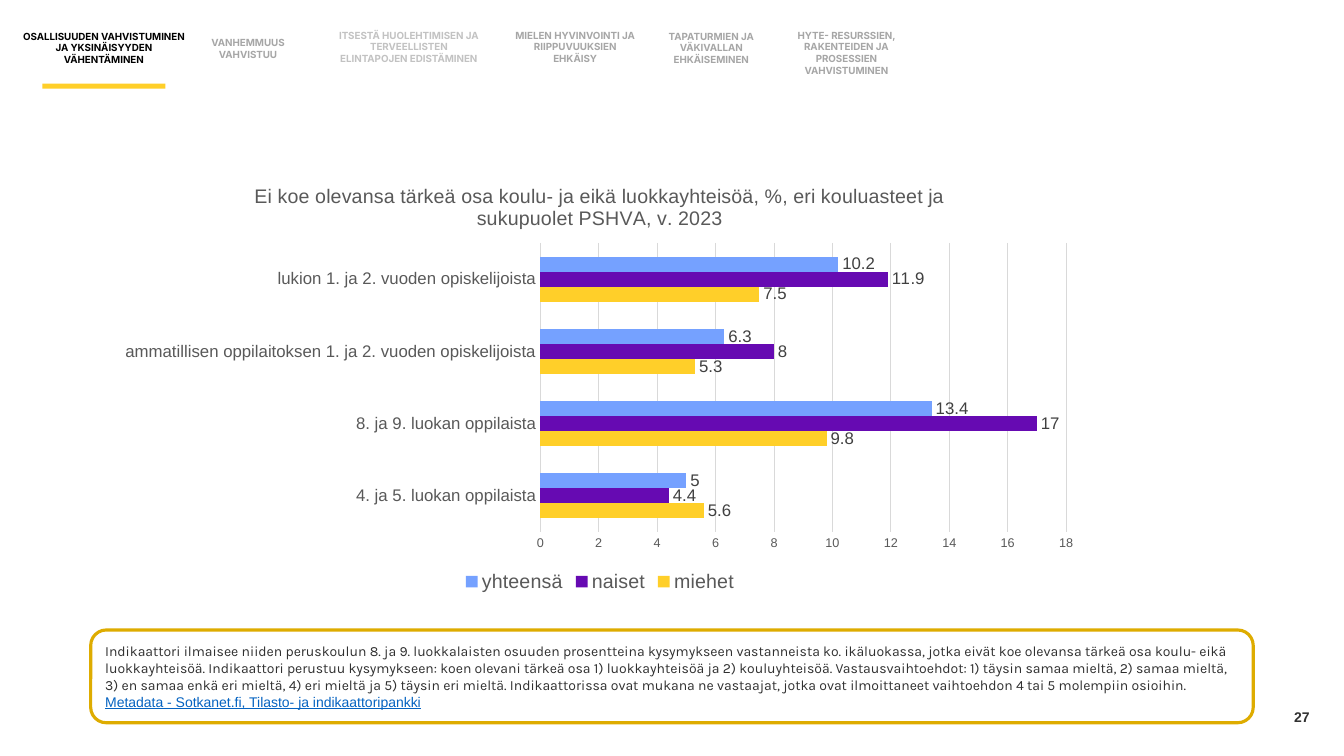
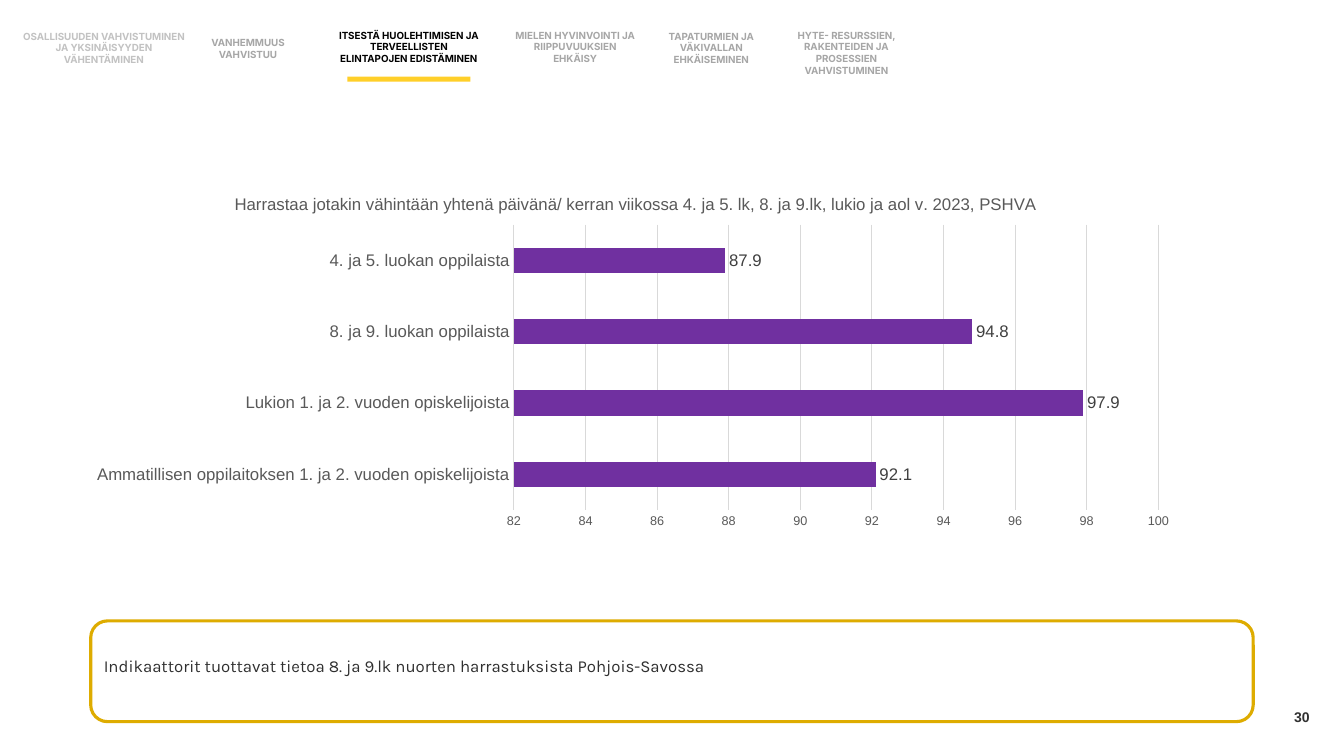
from pptx import Presentation
from pptx.chart.data import CategoryChartData
from pptx.dml.color import RGBColor
from pptx.enum.chart import XL_CHART_TYPE, XL_LABEL_POSITION, XL_LEGEND_POSITION, XL_TICK_MARK
from pptx.enum.shapes import MSO_SHAPE
from pptx.enum.text import MSO_ANCHOR, PP_ALIGN
from pptx.oxml import parse_xml
from pptx.oxml.ns import nsdecls
from pptx.util import Inches, Pt

# Shared look
BLACK, INK, NUMBER_INK = "000000", "303030", "313131"
GREY, PALE_GREY = "A6A6A6", "C2C2C2"
AXIS_TEXT, LABEL_TEXT, GRID = "595959", "404040", "D9D9D9"
YELLOW, FRAME, LINK = "FFCF29", "DEAC00", "0563C1"
PURPLE, BLUE, VIOLET = "660AB2", "75A1FF", "7030A0"

# Navigation tabs: text, (left, top, width, height), colour when not active
TABS = [
    ("OSALLISUUDEN VAHVISTUMINEN JA YKSINÄISYYDEN VÄHENTÄMINEN", (0.22, 0.24, 1.62, 0.47), PALE_GREY),
    ("VANHEMMUUS VAHVISTUU", (1.85, 0.36, 1.22, 0.24), GREY),
    ("ITSESTÄ HUOLEHTIMISEN JA TERVEELLISTEN ELINTAPOJEN EDISTÄMINEN", (3.35, 0.29, 1.41, 0.35), PALE_GREY),
    ("MIELEN HYVINVOINTI JA RIIPPUVUUKSIEN EHKÄISY", (5.07, 0.29, 1.27, 0.35), GREY),
    ("TAPATURMIEN JA VÄKIVALLAN EHKÄISEMINEN", (6.42, 0.3, 1.27, 0.35), GREY),
    ("HYTE- RESURSSIEN, RAKENTEIDEN JA PROSESSIEN\nVAHVISTUMINEN", (7.69, 0.29, 1.41, 0.47), GREY),
]
MARKER_WIDTH, MARKER_HEIGHT, MARKER_GAP = 1.22, 0.05, 0.12

BELONGING_NOTE = (
    "Indikaattori ilmaisee niiden peruskoulun 8. ja 9. luokkalaisten osuuden prosentteina kysymykseen "
    "vastanneista ko. ikäluokassa, jotka eivät koe olevansa tärkeä osa koulu- eikä luokkayhteisöä. "
    "Indikaattori perustuu kysymykseen: koen olevani tärkeä osa 1) luokkayhteisöä ja 2) kouluyhteisöä. "
    "Vastausvaihtoehdot: 1) täysin samaa mieltä, 2) samaa mieltä, 3) en samaa enkä eri mieltä, "
    "4) eri mieltä ja 5) täysin eri mieltä. Indikaattorissa ovat mukana ne vastaajat, jotka ovat "
    "ilmoittaneet vaihtoehdon 4 tai 5 molempiin osioihin. "
)


def rgb(color):
    return RGBColor.from_string(color)


def place(box):
    return [Inches(value) for value in box]


def style_font(font, size, color, name="Arial", bold=False):
    font.size, font.name, font.bold = Pt(size), name, bold
    font.color.rgb = rgb(color)


def add_text(page, box, text, size, color, name, bold=False,
             align=PP_ALIGN.LEFT, anchor=MSO_ANCHOR.MIDDLE):
    frame = page.shapes.add_textbox(*place(box)).text_frame
    frame.word_wrap = True
    frame.vertical_anchor = anchor
    frame.margin_left = frame.margin_right = frame.margin_top = frame.margin_bottom = 0
    frame.text = text
    for para in frame.paragraphs:
        para.alignment = align
        style_font(para.font, size, color, name, bold)


def add_tabs(page, active):
    for index, (text, box, resting) in enumerate(TABS):
        color = BLACK if index == active else resting
        add_text(page, box, text, 7, color, "Inter", True, PP_ALIGN.CENTER)
    left, top, width, height = TABS[active][1]
    marker = page.shapes.add_shape(MSO_SHAPE.RECTANGLE, *place((
        left + (width - MARKER_WIDTH) / 2, top + height + MARKER_GAP, MARKER_WIDTH, MARKER_HEIGHT)))
    marker.shadow.inherit = False
    marker.fill.solid()
    marker.fill.fore_color.rgb = rgb(YELLOW)
    marker.line.fill.background()


def add_page(deck, number, active):
    page = deck.slides.add_slide(deck.slide_layouts[6])
    add_text(page, (9.99, 6.91, 3, 0.4), number, 10, NUMBER_INK, "Arial", True, PP_ALIGN.RIGHT)
    add_tabs(page, active)
    return page


def add_note_frame(page, top, height):
    note = page.shapes.add_shape(MSO_SHAPE.ROUNDED_RECTANGLE, *place((0.9, top, 11.53, height)))
    note.shadow.inherit = False
    note.fill.background()
    note.line.color.rgb = rgb(FRAME)
    note.line.width = Pt(2.25)
    return note.text_frame


def fix_plot_area(chart, plot_box):
    """Pin the inner plot area, given as fractions of the chart."""
    values = "".join(f'<c:{tag} val="{value}"/>' for tag, value in zip("xywh", plot_box))
    layout = parse_xml(
        f'<c:layout {nsdecls("c")}><c:manualLayout><c:layoutTarget val="inner"/>'
        f'<c:xMode val="edge"/><c:yMode val="edge"/>{values}</c:manualLayout></c:layout>')
    plot_area = chart.plots[0]._element.getparent()
    for old in plot_area.findall(layout.tag):
        plot_area.remove(old)
    plot_area.insert(0, layout)


def add_bar_chart(page, box, plot_box, title, title_size, categories, series, scale, legend=False):
    data = CategoryChartData()
    data.categories = categories
    for name, values, _ in series:
        data.add_series(name, values)
    chart = page.shapes.add_chart(XL_CHART_TYPE.BAR_CLUSTERED, *place(box), data).chart
    style_font(chart.font, 10, BLACK)

    # Title and legend
    chart.has_title = True
    chart.chart_title.text_frame.text = title
    chart.chart_title.include_in_layout = False
    style_font(chart.chart_title.text_frame.paragraphs[0].font, title_size, AXIS_TEXT)
    chart.has_legend = legend
    if legend:
        chart.legend.position = XL_LEGEND_POSITION.BOTTOM
        chart.legend.include_in_layout = False
        style_font(chart.legend.font, 14, AXIS_TEXT)

    # Axes
    for axis, size in ((chart.category_axis, 12), (chart.value_axis, 9)):
        axis.major_tick_mark = axis.minor_tick_mark = XL_TICK_MARK.NONE
        style_font(axis.tick_labels.font, size, AXIS_TEXT)
    value_axis = chart.value_axis
    value_axis.minimum_scale, value_axis.maximum_scale = scale
    value_axis.major_unit = 2
    value_axis.has_major_gridlines = True
    value_axis.format.line.fill.background()
    for line in (chart.category_axis.format.line, value_axis.major_gridlines.format.line):
        line.color.rgb = rgb(GRID)
        line.width = Pt(0.75)

    # Bars and value labels
    plot = chart.plots[0]
    plot.gap_width = 182
    plot.vary_by_categories = False
    for bars, (_, _, color) in zip(plot.series, series):
        bars.format.fill.solid()
        bars.format.fill.fore_color.rgb = rgb(color)
        labels = bars.data_labels
        labels.show_value = True
        labels.position = XL_LABEL_POSITION.OUTSIDE_END
        style_font(labels.font, 12, LABEL_TEXT)
    fix_plot_area(chart, plot_box)


def build_belonging_page(deck):
    page = add_page(deck, "27", 0)
    frame = add_note_frame(page, 6.25, 0.92)
    frame.vertical_anchor = MSO_ANCHOR.MIDDLE
    para = frame.paragraphs[0]
    para.alignment = PP_ALIGN.LEFT
    for text, color, name in ((BELONGING_NOTE, INK, "Karla"),
                              ("Metadata - Sotkanet.fi, Tilasto- ja indikaattoripankki", LINK, "Arial")):
        span = para.add_run()
        span.text = text
        style_font(span.font, 10, color, name)
        span.font.underline = color == LINK
    add_bar_chart(
        page, (1.03, 1.64, 9.84, 4.28), (0.44, 0.18, 0.53, 0.67),
        "Ei koe olevansa tärkeä osa koulu- ja eikä luokkayhteisöä, %, eri kouluasteet ja "
        "sukupuolet PSHVA, v. 2023", 14,
        ["4. ja 5. luokan oppilaista", "8. ja 9. luokan oppilaista",
         "ammatillisen oppilaitoksen 1. ja 2. vuoden opiskelijoista",
         "lukion 1. ja 2. vuoden opiskelijoista"],
        [("miehet", (5.6, 9.8, 5.3, 7.5), YELLOW),
         ("naiset", (4.4, 17, 8, 11.9), PURPLE),
         ("yhteensä", (5, 13.4, 6.3, 10.2), BLUE)],
        (0, 18), legend=True)


def build_hobbies_page(deck):
    page = add_page(deck, "30", 2)
    add_note_frame(page, 6.16, 1)
    add_text(page, (1.03, 6.51, 11.13, 0.2),
             "Indikaattorit tuottavat tietoa 8. ja 9.lk nuorten harrastuksista Pohjois-Savossa",
             12, INK, "Karla", anchor=MSO_ANCHOR.TOP)
    add_bar_chart(
        page, (0.8, 1.77, 11.02, 3.54), (0.39, 0.13, 0.58, 0.8),
        "Harrastaa jotakin vähintään yhtenä päivänä/ kerran viikossa 4. ja 5. lk, 8. ja 9.lk, "
        "lukio ja aol v. 2023, PSHVA", 12,
        ["Ammatillisen oppilaitoksen 1. ja 2. vuoden opiskelijoista",
         "Lukion 1. ja 2. vuoden opiskelijoista",
         "8. ja 9. luokan oppilaista", "4. ja 5. luokan oppilaista"],
        [("Series 1", (92.1, 97.9, 94.8, 87.9), VIOLET)],
        (82, 100))


def main():
    deck = Presentation()
    deck.slide_width, deck.slide_height = Inches(13.33), Inches(7.5)
    build_belonging_page(deck)
    build_hobbies_page(deck)
    deck.save("out.pptx")


if __name__ == "__main__":
    main()
